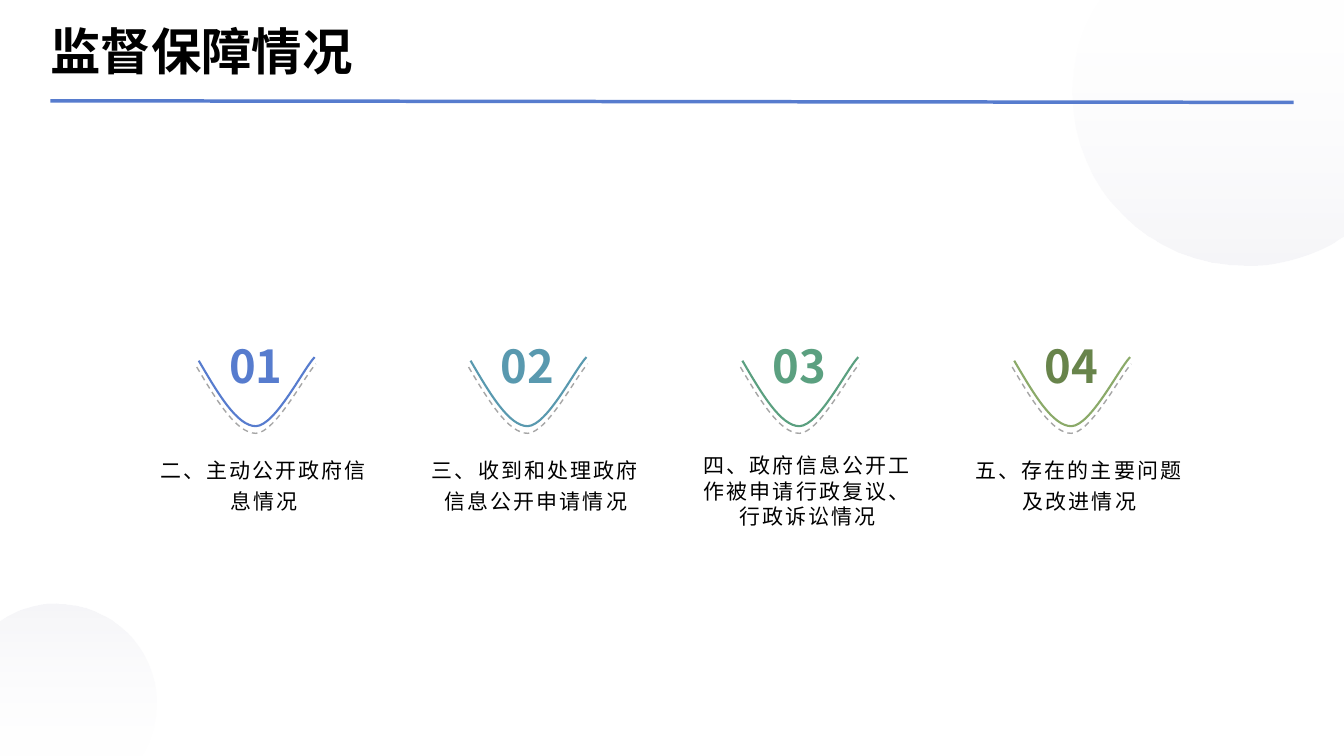
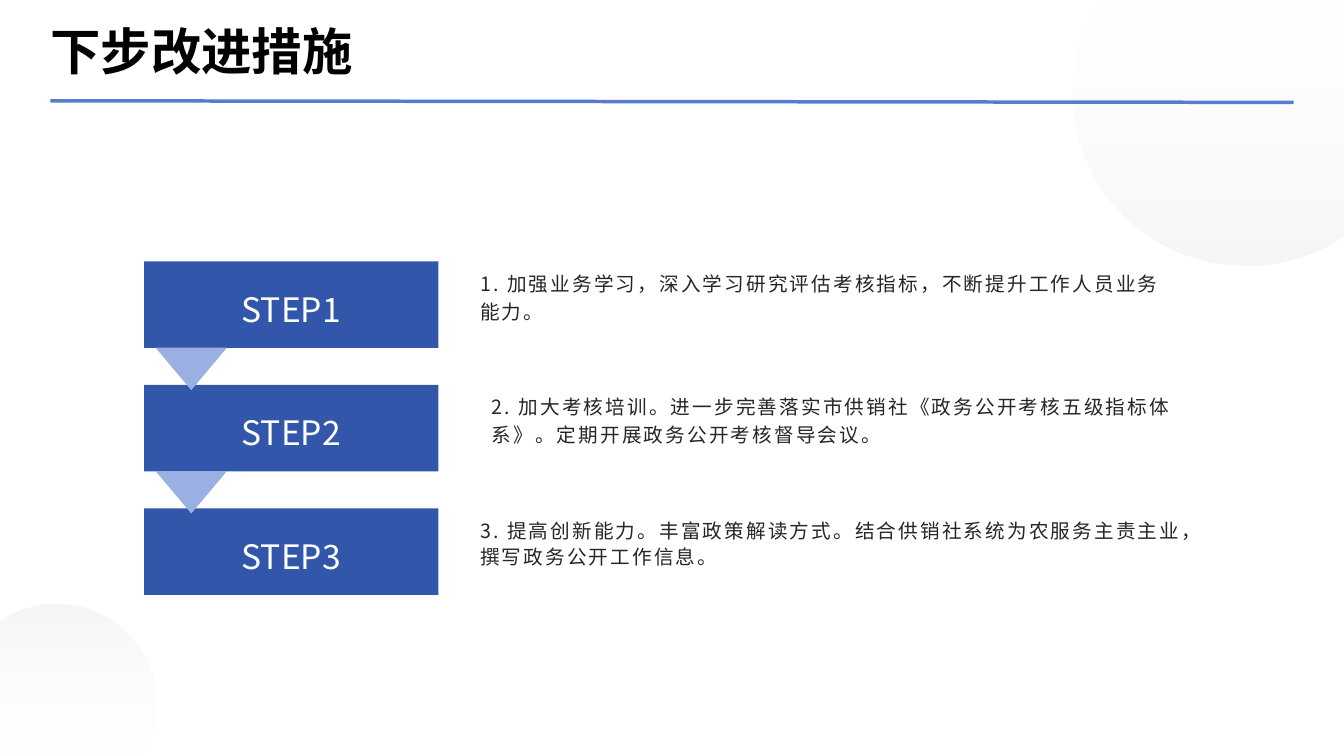
from lxml import etree
from pptx import Presentation
from pptx.dml.color import RGBColor
from pptx.enum import dml, shapes, text
from pptx.oxml import ns
from pptx.util import Cm, Pt

FONT = "Noto Sans CJK SC"
COLORS = {
    "white": "FFFFFF", "black": "000000", "ink": "262626",
    "haze": "D8D8E4", "dash": "A6A6A6", "step": "3257AA",
    "arrow": "9AB0E2", "blue": "577CCE", "teal": "5999AF",
    "green": "5BA080", "olive": "8BAA69", "moss": "68844B",
}
RGB = {name: RGBColor.from_string(value) for name, value in COLORS.items()}
CENTER = text.PP_ALIGN.CENTER
MIDDLE = text.MSO_ANCHOR.MIDDLE


def write(box, words, size, color, bold=None, align=None, spacing=None, tracking=0):
    box.text_frame.word_wrap = True
    box.text_frame.text = words
    para = box.text_frame.paragraphs[0]
    para.alignment = align
    para.line_spacing = spacing
    span = para.runs[0]
    span.font.size = Pt(size)
    span.font.bold = bold
    span.font.color.rgb = RGB[color]
    span.font.name = FONT
    properties = span.font._element
    etree.SubElement(properties, ns.qn("a:ea"), typeface=FONT)
    if tracking:
        properties.set("spc", str(int(tracking * 100)))
    return para


def draw_curve(page, points, straight=0, close=False):
    points = [(Cm(x), Cm(y)) for x, y in points]
    builder = page.shapes.build_freeform(*points[0])
    builder.add_line_segments(points[1:], close=close)
    outline = builder.convert_to_shape()
    outline.shadow.inherit = False
    bends = list(outline._element.iter(ns.qn("a:lnTo")))[straight:]
    for first, second, third in zip(bends[::3], bends[1::3], bends[2::3]):
        first.tag = ns.qn("a:cubicBezTo")
        first.extend([second[0], third[0]])
        for spare in (second, third):
            spare.getparent().remove(spare)
    return outline


deck = Presentation()
deck.slide_width, deck.slide_height = Cm(33.87), Cm(19.05)

top_circle = [
    (27.74, 0), (33.87, 0), (33.87, 5.94), (33.53, 6.15),
    (32.89, 6.48), (32.18, 6.68), (31.42, 6.68),
    (28.98, 6.68), (27.03, 4.75), (27.03, 2.34),
    (27.03, 1.6), (27.2, 0.89), (27.56, 0.28),
]
bottom_circle = [
    (3.53, 19.05), (0, 19.05), (0, 15.65), (0.2, 15.52),
    (0.56, 15.32), (0.97, 15.21), (1.4, 15.21),
    (2.79, 15.21), (3.94, 16.33), (3.94, 17.7),
    (3.94, 18.14), (3.81, 18.54), (3.63, 18.9),
]
turned_circle = [(3.94 - x, 34.26 - y) for x, y in bottom_circle]

pages = []
for title in ("监督保障情况", "下步改进措施"):
    page = deck.slides.add_slide(deck.slide_layouts[6])
    page.background.fill.solid()
    page.background.fill.fore_color.rgb = RGB["white"]
    for points, rotation in ((top_circle, 0), (turned_circle, 180)):
        circle = draw_curve(page, points, straight=3, close=True)
        circle.rotation = rotation
        circle.line.fill.background()
        circle.fill.gradient()
        circle.fill.gradient_angle = 270
        for stop, color in zip(circle.fill.gradient_stops, ("white", "haze")):
            stop.color.rgb = RGB[color]
        tints = circle._element.spPr.iter(ns.qn("a:srgbClr"))
        for tint, opacity in zip(tints, (10, 24)):
            etree.SubElement(tint, ns.qn("a:alpha"), val=str(opacity * 1000))

    rule = page.shapes.add_connector(
        shapes.MSO_CONNECTOR.STRAIGHT, Cm(1.27), Cm(2.54), Cm(32.6), Cm(2.58))
    rule.line.color.rgb = RGB["blue"]
    rule.line.width = Pt(2.5)
    etree.SubElement(rule._element.spPr, ns.qn("a:effectLst"))

    heading = page.shapes.add_textbox(Cm(1.27), Cm(0.43), Cm(31.32), Cm(1.7))
    frame = heading.text_frame
    frame.margin_left = frame.margin_right = frame.margin_top = frame.margin_bottom = 0
    frame.vertical_anchor = MIDDLE
    write(heading, title, 36, "black", bold=True)
    pages.append(page)

overview, steps = pages

solid_curve = [(-1.44, 9.09), (-0.95, 9.93), (-0.47, 10.74), (0, 10.74),
               (0.49, 10.72), (1.18, 9.32), (1.48, 9)]
dashed_curve = [(-1.49, 9.25), (-1, 10.08), (-0.49, 10.92), (0, 10.92),
                (0.49, 10.9), (1.21, 9.5), (1.51, 9.17)]
topics = [
    ("二、主动公开政府信息情况", "blue", "blue", 1.2),
    ("三、收到和处理政府信息公开申请情况", "teal", "teal", 1.2),
    ("四、政府信息公开工作被申请行政复议、行政诉讼情况", "green", "green", None),
    ("五、存在的主要问题及改进情况", "olive", "moss", 1.2),
]
for index, (topic, curve_color, number_color, spacing) in enumerate(topics):
    center = 6.45 + index * 6.85
    strokes = [
        (solid_curve, curve_color, 1.5, None),
        (dashed_curve, "dash", 1, dml.MSO_LINE.DASH),
    ]
    for points, color, weight, dash in strokes:
        stroke = draw_curve(overview, [(center + x, y) for x, y in points])
        stroke.fill.background()
        stroke.line.color.rgb = RGB[color]
        stroke.line.width = Pt(weight)
        stroke.line.dash_style = dash
    number = overview.shapes.add_textbox(Cm(center - 1.05), Cm(8.13), Cm(2.1), Cm(2.08))
    write(number, f"{index + 1:02}", 32.4, number_color, True, CENTER, 1.2)
    caption = overview.shapes.add_textbox(Cm(center - 2.83), Cm(11.29), Cm(6.07), Cm(2.18))
    write(caption, topic, 15, "black", align=CENTER, spacing=spacing, tracking=1.5)

measures = [
    ("1. 加强业务学习，深入学习研究评估考核指标，不断提升工作人员业务能力。", 11.85, 18.11, 1.2),
    ("2. 加大考核培训。进一步完善落实市供销社《政务公开考核五级指标体系》。定期开展政务公开考核督导会议。",
     12.14, 18.11, 1.2),
    ("3. 提高创新能力。丰富政策解读方式。结合供销社系统为农服务主责主业，撰写政务公开工作信息。",
     11.85, 18.39, 1.1),
]
tops = [6.59 + index * 3.11 for index in range(len(measures))]
filled = []
for index, top in enumerate(tops):
    block = steps.shapes.add_shape(
        shapes.MSO_SHAPE.RECTANGLE, Cm(3.63), Cm(top), Cm(7.42), Cm(2.18))
    block.text_frame.vertical_anchor = MIDDLE
    write(block, f"STEP{index + 1}", 24, "white", align=CENTER, spacing=1.2)
    filled.append((block, "step"))

for top in reversed(tops[:-1]):
    arrow = steps.shapes.add_shape(
        shapes.MSO_SHAPE.ISOSCELES_TRIANGLE, Cm(3.92), Cm(top + 2.17), Cm(1.8), Cm(1.07))
    arrow.rotation = 180
    filled.append((arrow, "arrow"))

for shape, color in filled:
    shape.shadow.inherit = False
    shape.fill.solid()
    shape.fill.fore_color.rgb = RGB[color]
    shape.line.fill.background()

for top, (measure, left, width, spacing) in zip(tops, measures):
    detail = steps.shapes.add_textbox(Cm(left), Cm(top), Cm(width), Cm(1.7))
    detail.text_frame.vertical_anchor = MIDDLE
    para = write(detail, measure, 14, "ink", spacing=spacing, tracking=1.5)
    para.space_after = Pt(10)

deck.save("out.pptx")
